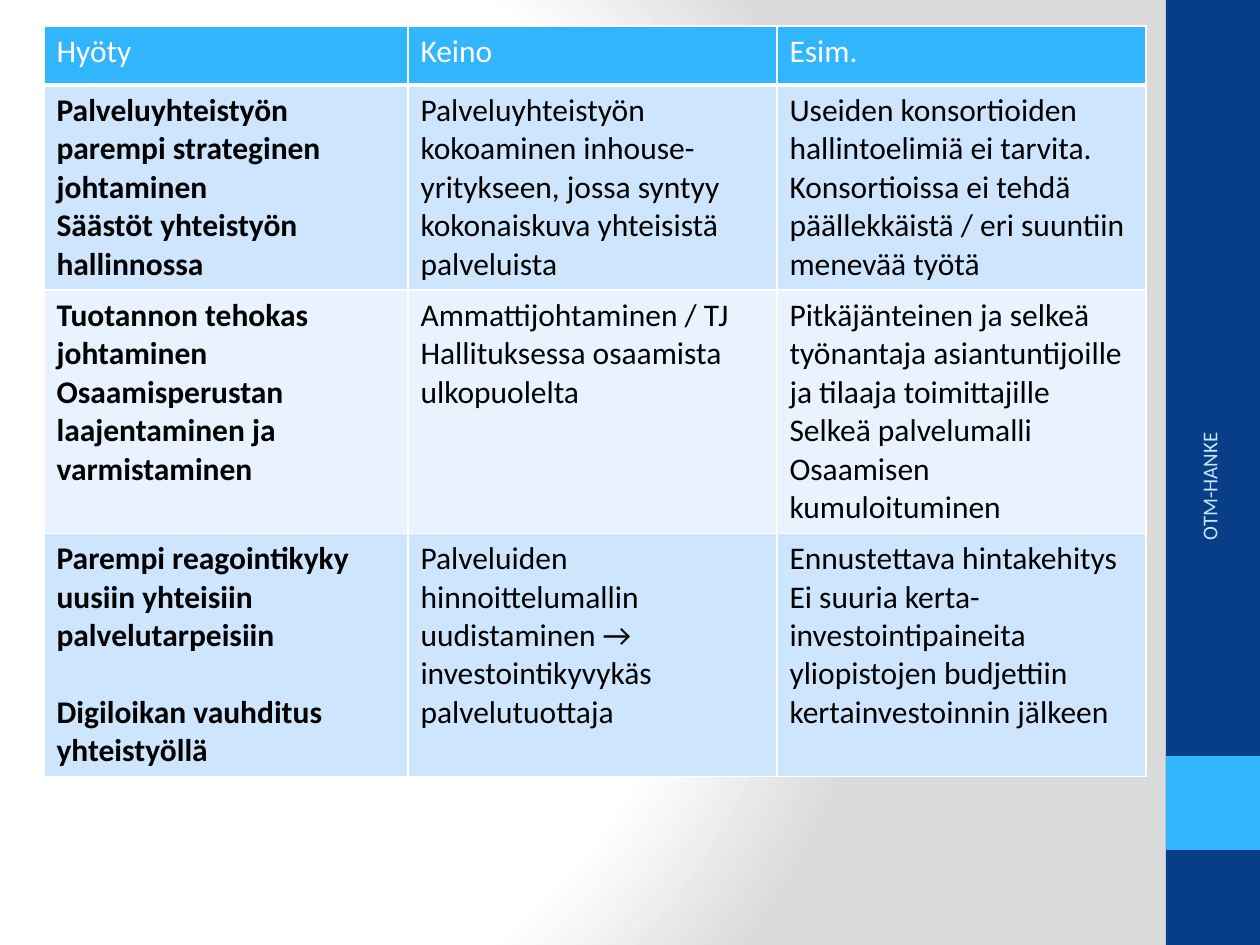
from lxml import etree
from pptx import Presentation
from pptx import util as u
from pptx.dml.color import RGBColor
from pptx.enum import shapes, text
from pptx.oxml import parse_xml
from pptx.oxml.ns import nsdecls, qn

PX = 914400 // 126
FONT = "Calibri"
NAVY, SKY, WHITE, BLACK = "073E87", "31B6FD", "FFFFFF", "000000"
BANDS = ["CEE5FE", "E8F3FF"]

# Content: each cell is a list of paragraphs
HEADER = ["Hyöty", "Keino", "Esim."]
ROWS = [
    (["Palveluyhteistyön parempi strateginen johtaminen",
      "Säästöt yhteistyön hallinnossa"],
     ["Palveluyhteistyön kokoaminen inhouse-yritykseen, jossa syntyy "
      "kokonaiskuva yhteisistä palveluista"],
     ["Useiden konsortioiden hallintoelimiä ei tarvita.",
      "Konsortioissa ei tehdä päällekkäistä / eri suuntiin menevää työtä"]),
    (["Tuotannon tehokas johtaminen Osaamisperustan laajentaminen ja varmistaminen"],
     ["Ammattijohtaminen / TJ", "Hallituksessa osaamista", "ulkopuolelta"],
     ["Pitkäjänteinen ja selkeä työnantaja asiantuntijoille ja tilaaja toimittajille",
      "Selkeä palvelumalli", "Osaamisen kumuloituminen"]),
    (["Parempi reagointikyky uusiin yhteisiin palvelutarpeisiin",
      "Digiloikan vauhditus yhteistyöllä"],
     ["Palveluiden hinnoittelumallin uudistaminen → investointikyvykäs palvelutuottaja"],
     ["Ennustettava hintakehitys",
      "Ei suuria kerta-investointipaineita yliopistojen budjettiin "
      "kertainvestoinnin jälkeen"]),
]
SPACED_PARAGRAPH = "Digiloikan vauhditus yhteistyöllä"
FOOTER = "OTM-HANKE"

# Layout in px
COLUMNS = [364, 369, 369]
ROW_HEIGHTS = [59, 205, 243, 243]
TABLE_LEFT, TABLE_TOP = 44, 26
BARS = [((1166, 0, 94, 945), NAVY), ((1166, 756, 94, 94), SKY)]
FOOTER_BOX = (1046, 558, 326, 50)


def px(*lengths):
    return [u.Emu(length * PX) for length in lengths]


def color(value):
    return RGBColor.from_string(value)


def style(paragraph, size, value, bold=False):
    font = paragraph.font
    font.name, font.size, font.bold = FONT, u.Pt(size), bold
    font.color.rgb = color(value)


def set_background(slide):
    slide.background.fill.gradient()
    gradient = slide.background.fill._xPr.find(qn("a:gradFill"))
    stops = "".join(f'<a:gs pos="{position}000"><a:srgbClr val="{value}"/></a:gs>'
                    for position, value in [(0, WHITE), (75, WHITE), (100, "DADADA")])
    gradient.getparent().replace(gradient, parse_xml(
        f'<a:gradFill {nsdecls("a")} rotWithShape="1"><a:gsLst>{stops}</a:gsLst>'
        '<a:path path="circle"><a:fillToRect l="20000" t="50000" r="100000" b="50000"/>'
        '</a:path></a:gradFill>'))


def set_borders(cell, bottom):
    properties = cell._tc.get_or_add_tcPr()
    for index, (side, width) in enumerate([("L", 1), ("R", 1), ("T", 1), ("B", bottom)]):
        properties.insert(index, parse_xml(
            f'<a:ln{side} {nsdecls("a")} w="{u.Pt(width)}"><a:solidFill>'
            f'<a:srgbClr val="{WHITE}"/></a:solidFill></a:ln{side}>'))


def fill_cell(cell, paragraphs, fill, value, bold, bottom):
    cell.fill.solid()
    cell.fill.fore_color.rgb = color(fill)
    set_borders(cell, bottom)
    cell.text = "\n".join(paragraphs)
    for paragraph in cell.text_frame.paragraphs:
        style(paragraph, 18, value, bold)
        if paragraph.text == SPACED_PARAGRAPH:
            paragraph.space_before = u.Pt(22)


def add_benefit_table(slide):
    frame = slide.shapes.add_table(
        len(ROW_HEIGHTS), len(COLUMNS),
        *px(TABLE_LEFT, TABLE_TOP, sum(COLUMNS), sum(ROW_HEIGHTS)))
    table = frame.table
    for column, width in zip(table.columns, px(*COLUMNS)):
        column.width = width
    for row, height in zip(table.rows, px(*ROW_HEIGHTS)):
        row.height = height
    for index, title in enumerate(HEADER):
        fill_cell(table.cell(0, index), [title], SKY, WHITE, False, 3)
    for row, cells in enumerate(ROWS, 1):
        for column, paragraphs in enumerate(cells):
            fill_cell(table.cell(row, column), paragraphs,
                      BANDS[(row - 1) % 2], BLACK, column == 0, 1)


def main():
    presentation = Presentation()
    presentation.slide_width, presentation.slide_height = px(1260, 945)
    slide = presentation.slides.add_slide(presentation.slide_layouts[6])
    set_background(slide)

    # Side bars
    for place, value in BARS:
        bar = slide.shapes.add_shape(shapes.MSO_SHAPE.RECTANGLE, *px(*place))
        bar.shadow.inherit = False
        bar.fill.solid()
        bar.fill.fore_color.rgb = color(value)
        bar.line.fill.background()

    add_benefit_table(slide)

    # Vertical footer
    footer = slide.shapes.add_textbox(*px(*FOOTER_BOX))
    footer.rotation = 270
    footer.text_frame.word_wrap = True
    footer.text_frame.vertical_anchor = text.MSO_ANCHOR.MIDDLE
    paragraph = footer.text_frame.paragraphs[0]
    paragraph.text = FOOTER
    paragraph.alignment = text.PP_ALIGN.RIGHT
    style(paragraph, 12, "C6E7FC")

    presentation.save("out.pptx")


if __name__ == "__main__":
    main()
